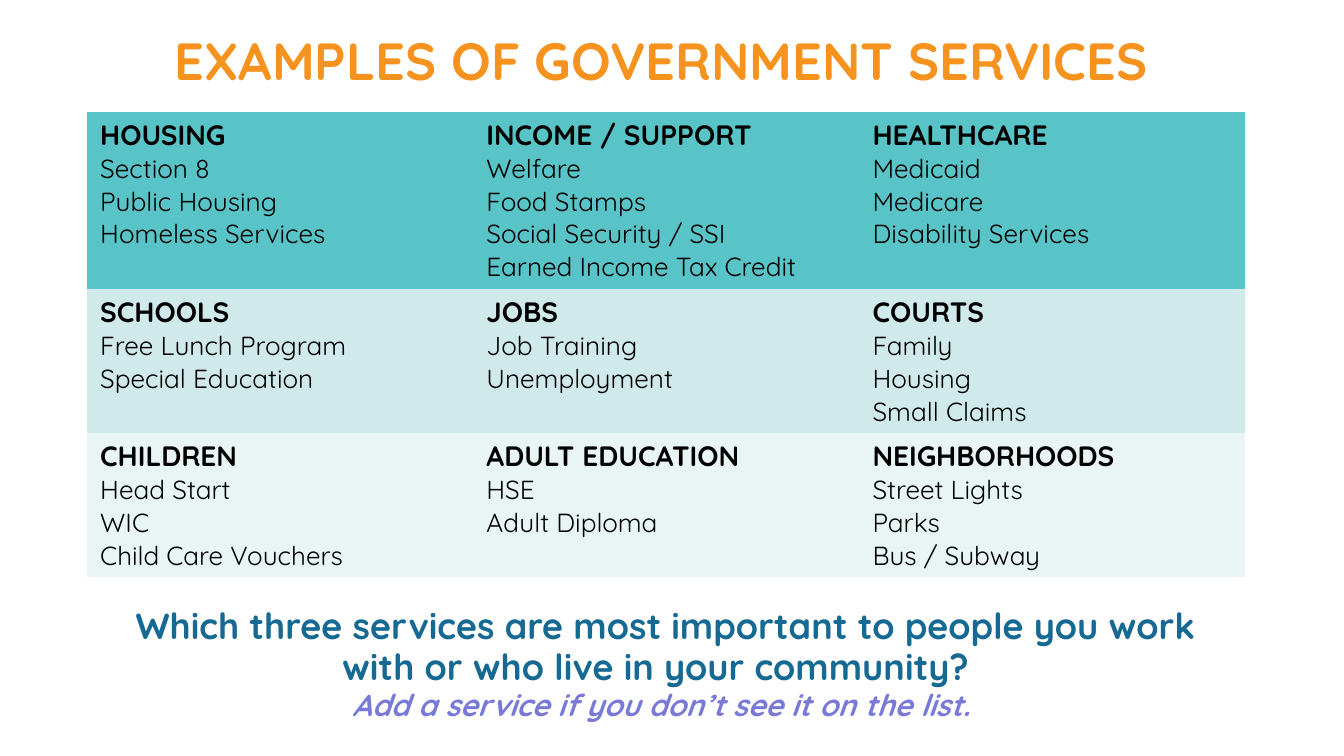
from dataclasses import dataclass

from pptx import Presentation
from pptx.dml.color import RGBColor
from pptx.enum.text import MSO_ANCHOR, MSO_AUTO_SIZE, PP_ALIGN
from pptx.oxml.ns import qn
from pptx.slide import Slide
from pptx.table import _Cell
from pptx.text.text import _Paragraph
from pptx.util import Pt

CENTER = PP_ALIGN.CENTER
MIDDLE = MSO_ANCHOR.MIDDLE
NO_AUTOFIT = MSO_AUTO_SIZE.NONE
TITLE_ONLY = 5
FONT = "Quicksand"
PLAIN_TABLE_STYLE = "{2D5ABB26-0587-4C30-8999-92F81FD0307C}"
TABLE_LEFT, TABLE_TOP, COLUMN_WIDTH = 46.5, 60, 206.9


@dataclass(frozen=True)
class Service:
    heading: str
    examples: tuple[str, ...]


@dataclass(frozen=True)
class ServiceRow:
    height: float
    fill: str
    services: tuple[Service, ...]


SERVICE_ROWS = (
    ServiceRow(95, "59C4C7", (
        Service("HOUSING", ("Section 8", "Public Housing", "Homeless Services")),
        Service("INCOME / SUPPORT", ("Welfare", "Food Stamps", "Social Security / SSI",
                                     "Earned Income Tax Credit")),
        Service("HEALTHCARE", ("Medicaid", "Medicare", "Disability Services")),
    )),
    ServiceRow(77, "D0EAEB", (
        Service("SCHOOLS", ("Free Lunch Program", "Special Education")),
        Service("JOBS", ("Job Training", "Unemployment")),
        Service("COURTS", ("Family", "Housing", "Small Claims")),
    )),
    ServiceRow(77, "E9F5F5", (
        Service("CHILDREN", ("Head Start", "WIC", "Child Care Vouchers")),
        Service("ADULT EDUCATION", ("HSE", "Adult Diploma")),
        Service("NEIGHBORHOODS", ("Street Lights", "Parks", "Bus / Subway")),
    )),
)


def rgb(color: str) -> RGBColor:
    return RGBColor.from_string(color)


def add_text(paragraph: _Paragraph, text: str, *, size: float, color: str = "000000",
             bold: bool = False, italic: bool = False) -> None:
    run = paragraph.add_run()
    run.text = text
    run.font.name = FONT
    run.font.size = Pt(size)
    run.font.color.rgb = rgb(color)
    run.font.bold = bold
    run.font.italic = italic


def fill_cell(cell: _Cell, service: Service, fill: str) -> None:
    cell.fill.solid()
    cell.fill.fore_color.rgb = rgb(fill)
    cell.margin_left = cell.margin_right = Pt(7.2)
    cell.margin_top = cell.margin_bottom = Pt(2.9)
    add_text(cell.text_frame.paragraphs[0], service.heading, size=15, bold=True)
    for example in service.examples:
        add_text(cell.text_frame.add_paragraph(), example, size=14)


def add_services_table(slide: Slide, rows: tuple[ServiceRow, ...]) -> None:
    column_count = len(rows[0].services)
    frame = slide.shapes.add_table(
        len(rows), column_count, Pt(TABLE_LEFT), Pt(TABLE_TOP),
        Pt(COLUMN_WIDTH * column_count), Pt(sum(row.height for row in rows)))
    for style in frame.element.iter(qn("a:tableStyleId")):
        style.text = PLAIN_TABLE_STYLE
    table = frame.table
    table.first_row = table.horz_banding = False
    for column in table.columns:
        column.width = Pt(COLUMN_WIDTH)
    for row_index, row in enumerate(rows):
        table.rows[row_index].height = Pt(row.height)
        for column_index, service in enumerate(row.services):
            fill_cell(table.cell(row_index, column_index), service, row.fill)


def add_heading(slide: Slide) -> None:
    heading = slide.shapes.add_textbox(Pt(82.8), Pt(11.5), Pt(542.9), Pt(41))
    heading.text_frame.word_wrap = True
    paragraph = heading.text_frame.paragraphs[0]
    paragraph.alignment = CENTER
    add_text(paragraph, "EXAMPLES OF GOVERNMENT SERVICES", size=28, color="F6921E", bold=True)


def place_question(slide: Slide) -> None:
    question = slide.shapes.title
    question.left, question.top = Pt(47.5), Pt(316.8)
    question.width, question.height = Pt(613.4), Pt(78.5)
    frame = question.text_frame
    frame.word_wrap = True
    frame.auto_size = NO_AUTOFIT
    frame.vertical_anchor = MIDDLE
    paragraph = frame.paragraphs[0]
    paragraph.alignment = CENTER
    paragraph.line_spacing = 0.95
    add_text(paragraph, " Which three services are most important to people you work "
             "with or who live in your community? ", size=19.4, color="156993", bold=True)
    paragraph.add_line_break()
    add_text(paragraph, "Add a service if you don’t see it on the list.",
             size=16.2, color="7979D8", bold=True, italic=True)


def main() -> None:
    presentation = Presentation()
    presentation.slide_width, presentation.slide_height = Pt(720), Pt(405)
    slide = presentation.slides.add_slide(presentation.slide_layouts[TITLE_ONLY])
    place_question(slide)
    add_services_table(slide, SERVICE_ROWS)
    add_heading(slide)
    presentation.save("out.pptx")


if __name__ == "__main__":
    main()
